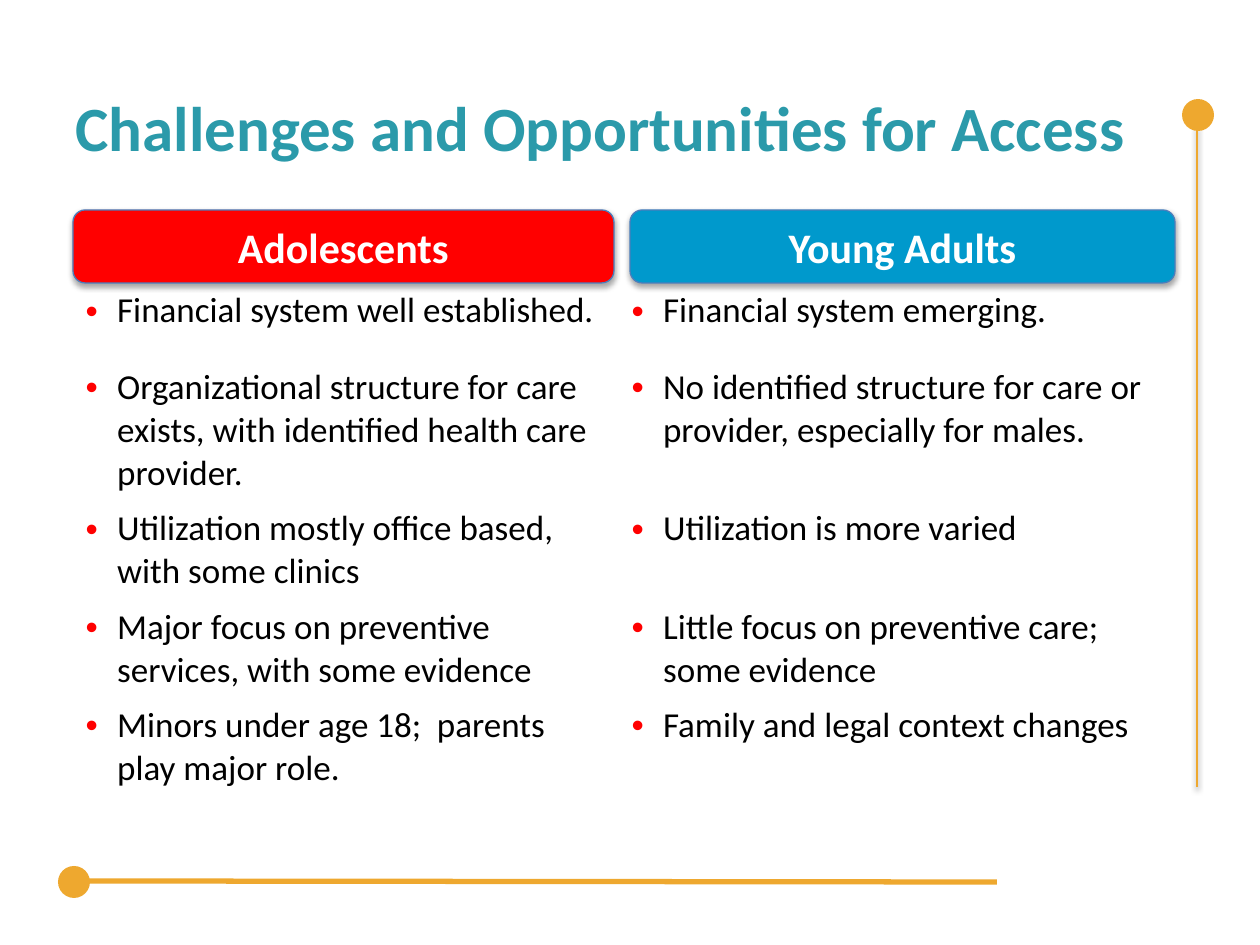
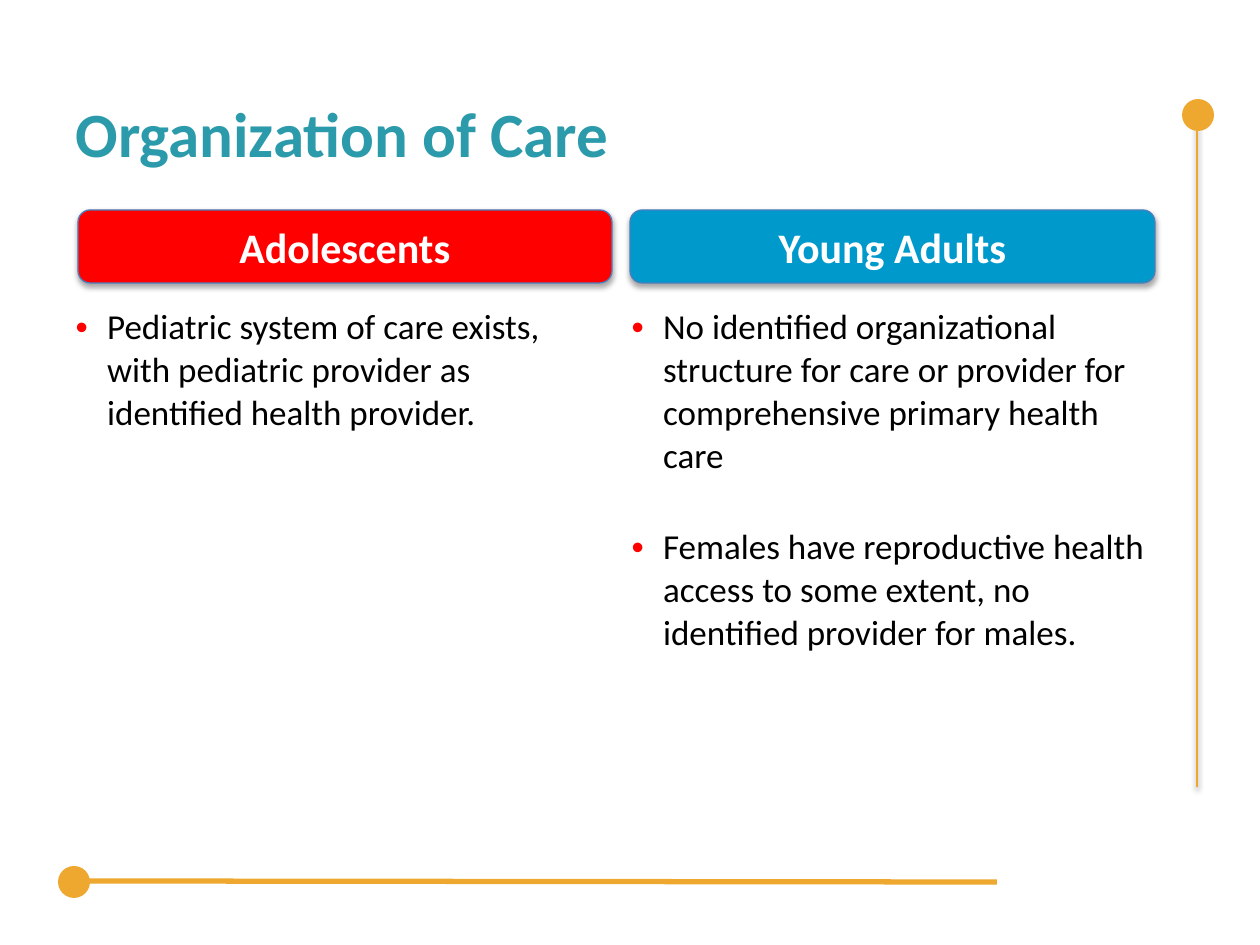
from lxml import etree
from pptx import Presentation
from pptx import util as u
from pptx.dml.color import RGBColor
from pptx.enum import shapes, text
from pptx.oxml import parse_xml
from pptx.oxml.ns import nsdecls, qn

PX = 914400 / 126
TEAL, GOLD, RED, BLUE = "2B9AAA", "EEA82F", "FF0000", "0099CC"
OUTLINE, WHITE, BLACK = "4B7EBC", "FFFFFF", "000000"
FONT = "Calibri"
TITLE = {"name": FONT, "size": u.Pt(36), "bold": True}
HEADING = {"name": FONT, "size": u.Pt(24), "bold": True}
BODY = {"name": FONT, "size": u.Pt(20), "bold": False}
BULLET_INDENT = 228600
DOT = 32
MIDDLE, TOP = text.MSO_ANCHOR.MIDDLE, text.MSO_ANCHOR.TOP


def px(*lengths):
    return [u.Emu(round(length * PX)) for length in lengths]


def colour(value):
    return RGBColor.from_string(value)


def write(para, words, style, ink):
    span = para.add_run()
    span.text = words
    for name, value in style.items():
        setattr(span.font, name, value)
    span.font.color.rgb = colour(ink)


def set_shadow(shape, alpha=0, distance=0):
    """Replace the theme's shadow by a soft one below, or by none if alpha is 0."""
    props = shape._element.spPr
    for old in props.findall(qn("a:effectLst")):
        props.remove(old)
    effects = etree.SubElement(props, qn("a:effectLst"))
    if alpha:
        effects.append(parse_xml(
            f'<a:outerShdw {nsdecls("a")} blurRad="40000" dist="{distance}" '
            f'dir="5400000" rotWithShape="0"><a:srgbClr val="{BLACK}">'
            f'<a:alpha val="{alpha * 1000}"/></a:srgbClr></a:outerShdw>'))


def add_rule(page, start, end, weight, **shadow):
    rule = page.shapes.add_connector(
        shapes.MSO_CONNECTOR.STRAIGHT, *px(*start, *end))
    rule.line.color.rgb = colour(GOLD)
    rule.line.width = u.Pt(weight)
    set_shadow(rule, **shadow)


def add_dot(page, left, top):
    dot = page.shapes.add_shape(
        shapes.MSO_SHAPE.OVAL, *px(left, top, DOT, DOT))
    dot.shadow.inherit = False
    dot.fill.solid()
    dot.fill.fore_color.rgb = colour(GOLD)
    dot.line.fill.background()


def add_frame(page):
    add_rule(page, (1197, 787), (1197, 127), 1.5, alpha=38, distance=20000)
    add_dot(page, 1182, 99)
    add_rule(page, (84, 881), (997, 882), 3)
    add_dot(page, 58, 866)


def set_title(page, words, width, height):
    title = page.shapes.title
    title.left, title.top, title.width, title.height = px(63, 53, width, height)
    frame = title.text_frame
    frame.word_wrap = True
    frame.auto_size = text.MSO_AUTO_SIZE.NONE
    frame.vertical_anchor = MIDDLE
    para = frame.paragraphs[0]
    para.alignment = text.PP_ALIGN.LEFT
    write(para, words, TITLE, TEAL)


def add_heading(page, words, left, width, fill):
    box = page.shapes.add_shape(
        shapes.MSO_SHAPE.ROUNDED_RECTANGLE, *px(left, 210, width, 73))
    box.fill.solid()
    box.fill.fore_color.rgb = colour(fill)
    box.line.color.rgb = colour(OUTLINE)
    box.line.width = u.Pt(0.75)
    set_shadow(box, alpha=35, distance=23000)
    box.text_frame.vertical_anchor = MIDDLE
    para = box.text_frame.paragraphs[0]
    para.alignment = text.PP_ALIGN.CENTER
    write(para, words, HEADING, WHITE)


def add_bullet(para):
    props = para._p.get_or_add_pPr()
    props.set("marL", str(BULLET_INDENT))
    props.set("indent", str(-BULLET_INDENT))
    mark = etree.SubElement(props, qn("a:buClr"))
    etree.SubElement(mark, qn("a:srgbClr"), val=RED)
    etree.SubElement(props, qn("a:buFont"), typeface="Arial")
    etree.SubElement(props, qn("a:buChar"), char="•")


def add_comparison(page, left, top, widths, heights, rows, anchor_of):
    """Add a plain bulleted table; anchor_of(row, column) gives cell anchors."""
    table = page.shapes.add_table(
        len(rows), len(widths),
        *px(left, top, sum(widths), sum(heights))).table
    table.first_row = table.horz_banding = False
    for column, width in zip(table.columns, px(*widths)):
        column.width = width
    for row, height in zip(table.rows, px(*heights)):
        row.height = height
    for r, row in enumerate(rows):
        for c, words in enumerate(row):
            cell = table.cell(r, c)
            cell.fill.background()
            cell.vertical_anchor = anchor_of(r, c)
            if words:
                para = cell.text_frame.paragraphs[0]
                add_bullet(para)
                write(para, words, BODY, BLACK)


def add_page(deck, title, title_size, adolescents, young_adults, comparison):
    page = deck.slides.add_slide(deck.slide_layouts[5])
    add_frame(page)
    set_title(page, title, *title_size)
    add_comparison(page, **comparison)
    add_heading(page, "Adolescents", *adolescents, RED)
    add_heading(page, "Young Adults", *young_adults, BLUE)


def main():
    deck = Presentation()
    deck.slide_width, deck.slide_height = px(1260, 945)
    add_page(
        deck, "Challenges and Opportunities for Access", (1125, 147),
        adolescents=(73, 541), young_adults=(630, 545),
        comparison={
            "left": 73, "top": 262,
            "widths": (546, 548), "heights": (98, 141, 98, 98, 98),
            "anchor_of": lambda r, c: MIDDLE if r == 0 or c == 0 else TOP,
            "rows": [
                ("Financial system well established.",
                 "Financial system emerging."),
                ("Organizational structure for care exists, with identified "
                 "health care provider.",
                 "No identified structure for care or provider, especially "
                 "for males."),
                ("Utilization mostly office based, with some clinics",
                 "Utilization is more varied"),
                ("Major focus on preventive services, with some evidence",
                 "Little focus on preventive care; some evidence"),
                ("Minors under age 18;  parents play major role.",
                 "Family and legal context changes"),
            ]})
    add_page(
        deck, "Organization of Care", (1134, 158),
        adolescents=(78, 534), young_adults=(630, 525),
        comparison={
            "left": 63, "top": 300,
            "widths": (556, 538), "heights": (220, 141),
            "anchor_of": lambda r, c: TOP,
            "rows": [
                ("Pediatric system of care exists, with pediatric provider "
                 "as identified health provider.",
                 "No identified organizational structure for care or "
                 "provider for comprehensive primary health care"),
                ("", "Females have reproductive health access to some "
                 "extent, no identified provider for males."),
            ]})
    deck.save("out.pptx")


if __name__ == "__main__":
    main()
